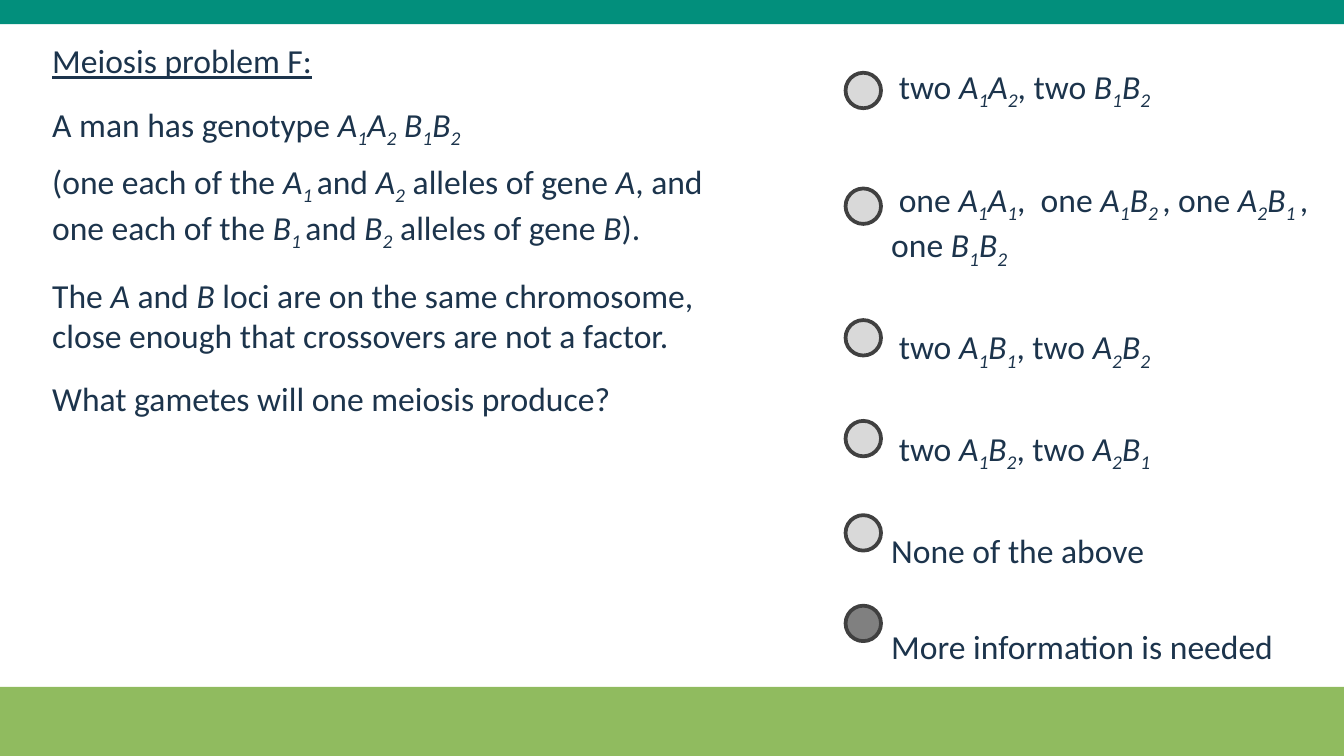
from itertools import groupby

from pptx import Presentation
from pptx import util as u
from pptx.dml.color import RGBColor
from pptx.enum import shapes, text
from pptx.oxml.ns import qn

W, H = 720, 405
PROBLEM = [
    ("A man has genotype *A1A2* *B1B2*", 6),
    ("(one each of the *A1 *and *A2* alleles of gene *A*, and one each of the "
     "*B1 *and *B2* alleles of gene *B*).", 12),
    ("The *A* and *B* loci are on the same chromosome, "
     "close enough that crossovers are not a factor.", 12),
    ("What gametes will one meiosis produce?", 12),
]
ANSWERS = [
    (" two *A1A2*, two *B1B2*", 36),
    (" one *A1A1*,  one *A1B2 *, one *A2B1 *, one *B1B2*", 30),
    (" two *A1B1*, two *A2B2*", 30),
    (" two *A1B2*, two *A2B1*", 30),
    ("None of the above", 30),
    ("More information is needed", 30),
]
BUTTON_TOPS = [39, 101, 171.5, 225.5, 276, 324.5]


def rgb(value):
    """Turn a hex string into a colour."""
    return RGBColor.from_string(value)


def add_shape(s, kind, box, fill, line=None):
    """Draw a flat preset shape in a box, with an optional outline."""
    sp = s.shapes.add_shape(kind, *map(u.Pt, box))
    sp.shadow.inherit = False
    sp.fill.solid()
    sp.fill.fore_color.rgb = rgb(fill)
    if line:
        sp.line.color.rgb = rgb(line)
        sp.line.width = u.Pt(2)
    else:
        sp.line.fill.background()


def add_genotype_runs(p, marked):
    """Write text whose starred parts are italic genes with subscript numbers."""
    for i, part in enumerate(marked.split("*")):
        italic = i % 2 == 1
        for low, chars in groupby(part, lambda c: italic and c in "12 "):
            r = p.add_run()
            r.text = "".join(chars)
            if italic:
                r.font.italic = True
            if low:
                r._r.get_or_add_rPr().set("baseline", "-25000")


def fill_placeholder(sp, box, items):
    """Move a placeholder to a box and fill it with unbulleted paragraphs."""
    sp.left, sp.top, sp.width, sp.height = map(u.Pt, box)
    tf = sp.text_frame
    tf.word_wrap = True
    tf.auto_size = text.MSO_AUTO_SIZE.NONE
    tf.vertical_anchor = text.MSO_ANCHOR.TOP
    for i, (marked, after) in enumerate(items):
        p = tf.add_paragraph() if i else tf.paragraphs[0]
        p.alignment = text.PP_ALIGN.LEFT
        p.space_before, p.space_after = u.Pt(0), u.Pt(after)
        p.font.name, p.font.size = "Calibri", u.Pt(18)
        p.font.color.rgb = rgb("1C344C")
        pPr = p._p.get_or_add_pPr()
        pPr.set("marL", "0")
        pPr.set("indent", "0")
        pPr.insert_element_before(pPr.makeelement(qn("a:buNone"), {}),
                                  "a:tabLst", "a:defRPr", "a:extLst")
        add_genotype_runs(p, marked)


def add_bars(s, width, height):
    """Draw the bands along the top and bottom edges."""
    rect = shapes.MSO_SHAPE.RECTANGLE
    add_shape(s, rect, (0, 368, width, height - 368), "90BB5F")
    add_shape(s, rect, (0, 0, width, 13), "028F7C")


def add_problem(s, x, y, w, h):
    """Place the heading and the problem statement."""
    title = s.shapes.title
    fill_placeholder(title, (x, y, w, 30), [("Meiosis problem F:", 0)])
    title.text_frame.paragraphs[0].font.underline = True
    fill_placeholder(s.placeholders[1], (x, y + 34, w, h - 34), PROBLEM)


def add_answers(s, x, y, w, h):
    """Place the answer list and its buttons, the last one selected."""
    fill_placeholder(s.placeholders[2], (x + 17.25, y, w - 17.25, h), ANSWERS)
    for i, top in enumerate(BUTTON_TOPS):
        fill = "808080" if i == len(BUTTON_TOPS) - 1 else "D9D9D9"
        add_shape(s, shapes.MSO_SHAPE.OVAL, (x, top, 19, 19), fill, "404040")


def main():
    """Build the slide and save it."""
    prs = Presentation()
    prs.slide_width, prs.slide_height = u.Pt(W), u.Pt(H)
    s = prs.slides.add_slide(prs.slide_layouts[3])
    add_bars(s, W, H)
    add_problem(s, 20.75, 18, 381, 202)
    add_answers(s, 453, 31.5, 269, 318)
    prs.save("out.pptx")


if __name__ == "__main__":
    main()
